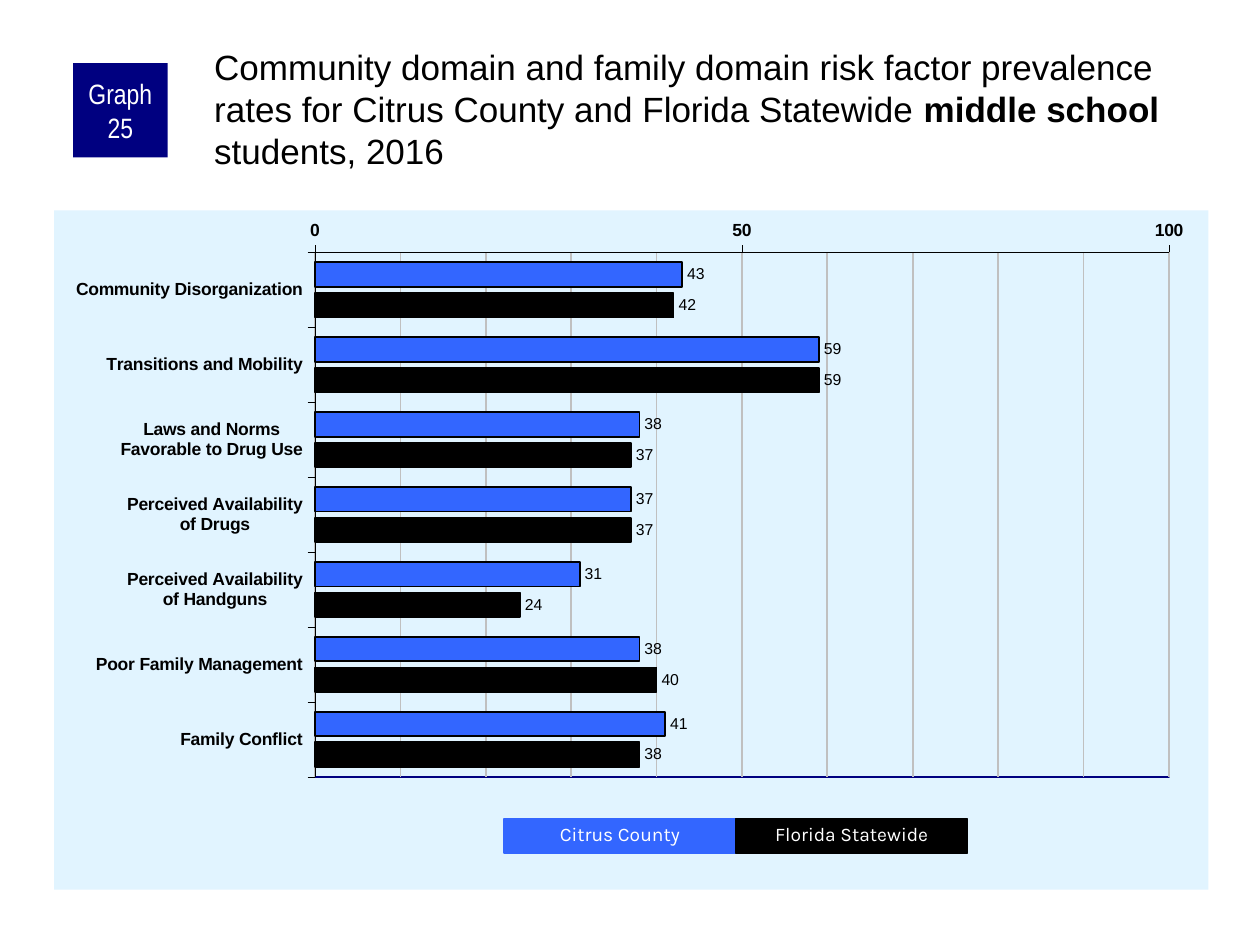
from copy import deepcopy

from lxml import etree
from pptx import Presentation
from pptx.chart.data import CategoryChartData
from pptx.dml.color import RGBColor
from pptx.enum import chart as charts, shapes, text
from pptx.oxml import ns
from pptx.util import Inches, Pt

BLACK = RGBColor(0x00, 0x00, 0x00)
WHITE = RGBColor(0xFF, 0xFF, 0xFF)
NAVY = RGBColor(0x00, 0x00, 0x80)
BLUE = RGBColor(0x33, 0x66, 0xFF)
PALE_BLUE = RGBColor(0xE1, 0xF4, 0xFF)
GREY = RGBColor(0xC0, 0xC0, 0xC0)

RISK_FACTORS = [
    ("Community Disorganization", 43, 42),
    ("Transitions and Mobility", 59, 59),
    ("Laws and Norms\nFavorable to Drug Use", 38, 37),
    ("Perceived Availability\nof Drugs", 37, 37),
    ("Perceived Availability\nof Handguns", 31, 24),
    ("Poor Family Management", 38, 40),
    ("Family Conflict", 41, 38),
]
AREAS = [("Citrus County", BLUE), ("Florida Statewide", BLACK)]


def format_font(font, size, color=BLACK, name="Arial", bold=False):
    font.size = Pt(size)
    font.name = name
    font.bold = bold
    font.color.rgb = color


def add_text(paragraph, words, align=text.PP_ALIGN.LEFT, spacing=None, **style):
    paragraph.alignment = align
    if spacing:
        paragraph.line_spacing = spacing
    run = paragraph.add_run()
    run.text = words
    format_font(run.font, **style)


def format_line(line, color, width):
    line.color.rgb = color
    line.width = Pt(width)


def area_properties(fill=None, line=None):
    properties = etree.Element(ns.qn("c:spPr"), nsmap={"c": ns.nsuri("c"), "a": ns.nsuri("a")})

    def paint(parent, color):
        if color is None:
            etree.SubElement(parent, ns.qn("a:noFill"))
        else:
            solid = etree.SubElement(parent, ns.qn("a:solidFill"))
            etree.SubElement(solid, ns.qn("a:srgbClr"), val=str(color))

    paint(properties, fill)
    paint(etree.SubElement(properties, ns.qn("a:ln"), w=str(Pt(1))), line)
    return properties


class SlideBuilder:
    def __init__(self, slide):
        self.slide = slide

    def title(self, box, parts):
        title = self.slide.shapes.title
        title.left, title.top, title.width, title.height = map(Inches, box)
        frame = title.text_frame
        frame.word_wrap = True
        frame.auto_size = text.MSO_AUTO_SIZE.NONE
        frame.vertical_anchor = text.MSO_ANCHOR.TOP
        frame.margin_left = frame.margin_top = Inches(0.03)
        frame.margin_right = frame.margin_bottom = 0
        paragraph = frame.paragraphs[0]
        paragraph.line_spacing = 1.0
        paragraph.space_before = Pt(0)
        for words, bold in parts:
            add_text(paragraph, words, size=20, bold=bold)

    def label(self, box, words, fill, outline=False, margins=(0.1, 0.05),
              anchor=text.MSO_ANCHOR.TOP, **style):
        label = self.slide.shapes.add_shape(shapes.MSO_SHAPE.RECTANGLE, *map(Inches, box))
        label.shadow.inherit = False
        label.fill.solid()
        label.fill.fore_color.rgb = fill
        if outline:
            format_line(label.line, fill, 0.75)
        else:
            label.line.fill.background()
        frame = label.text_frame
        frame.word_wrap = True
        frame.vertical_anchor = anchor
        frame.margin_left = frame.margin_right = Inches(margins[0])
        frame.margin_top = frame.margin_bottom = Inches(margins[1])
        add_text(frame.paragraphs[0], words, align=text.PP_ALIGN.CENTER, color=WHITE, **style)

    def bar_chart(self, box, rows, colors, plot_layout):
        data = CategoryChartData()
        categories, *columns = zip(*rows)
        data.categories = categories
        for number, values in enumerate(columns, 1):
            data.add_series(f"Series {number}", values)
        chart = self.slide.shapes.add_chart(
            charts.XL_CHART_TYPE.BAR_CLUSTERED, *map(Inches, box), data).chart
        chart.has_legend = False
        chart.has_title = False
        format_font(chart.font, 11.8)
        self.axes(chart)
        self.bars(chart.plots[0], colors)
        self.areas(chart, plot_layout)

    def axes(self, chart):
        factors, scale = chart.category_axis, chart.value_axis
        for axis in (factors, scale):
            format_font(axis.tick_labels.font, 10, bold=True)
            format_line(axis.format.line, BLACK, 0.25)
            axis.major_tick_mark = charts.XL_TICK_MARK.OUTSIDE
            axis.minor_tick_mark = charts.XL_TICK_MARK.NONE
        factors.reverse_order = True
        factors.crosses = charts.XL_AXIS_CROSSES.MAXIMUM
        scale.minimum_scale, scale.maximum_scale = 0, 100
        scale.major_unit, scale.minor_unit = 50, 10
        scale.has_major_gridlines = scale.has_minor_gridlines = True
        format_line(scale.major_gridlines.format.line, GREY, 1)
        major, minor = (chart._chartSpace.find(f".//{ns.qn(tag)}")
                        for tag in ("c:majorGridlines", "c:minorGridlines"))
        minor.append(deepcopy(major.find(ns.qn("c:spPr"))))

    def bars(self, plot, colors):
        plot.gap_width, plot.overlap = 80, -25
        plot.vary_by_categories = False
        for series, color in zip(plot.series, colors):
            series.format.fill.solid()
            series.format.fill.fore_color.rgb = color
            format_line(series.format.line, BLACK, 1)
            labels = series.data_labels
            labels.show_value = True
            labels.position = charts.XL_LABEL_POSITION.OUTSIDE_END
            format_font(labels.font, 9)

    def areas(self, chart, plot_layout):
        chart_part = chart._chartSpace.find(ns.qn("c:chart"))
        chart_part.addnext(area_properties(fill=PALE_BLUE))
        plot_area = chart_part.find(ns.qn("c:plotArea"))
        for layout in plot_area.findall(ns.qn("c:layout")):
            plot_area.remove(layout)
        layout = etree.Element(ns.qn("c:layout"))
        manual = etree.SubElement(layout, ns.qn("c:manualLayout"))
        settings = [("layoutTarget", "inner"), ("xMode", "edge"), ("yMode", "edge")]
        for tag, value in settings + list(zip("xywh", plot_layout)):
            etree.SubElement(manual, ns.qn(f"c:{tag}"), val=str(value))
        plot_area.insert(0, layout)
        plot_area.append(area_properties(line=NAVY))


def main():
    deck = Presentation()
    deck.slide_width, deck.slide_height = Inches(10), Inches(7.5)
    builder = SlideBuilder(deck.slides.add_slide(deck.slide_layouts[5]))
    builder.bar_chart((0.43, 1.67, 9.16, 5.39), RISK_FACTORS,
                      [color for _, color in AREAS], (0.226, 0.062, 0.74, 0.772))
    builder.label((0.58, 0.5, 0.75, 0.75), "Graph 25", NAVY, margins=(0.05, 0),
                  anchor=text.MSO_ANCHOR.MIDDLE, size=16, name="Arial Narrow")
    builder.title((1.67, 0.33, 7.92, 0.83), [
        ("Community domain and family domain risk factor prevalence rates "
         "for Citrus County and Florida Statewide ", False),
        ("middle school", True),
        (" students, 2016", False),
    ])
    key_width = 1.84
    for index, (area, color) in enumerate(AREAS):
        builder.label((4 + index * key_width, 6.5, key_width, 0.27), area, color,
                      outline=True, spacing=0.9, size=11, name="Karla")
    deck.save("out.pptx")


if __name__ == "__main__":
    main()
